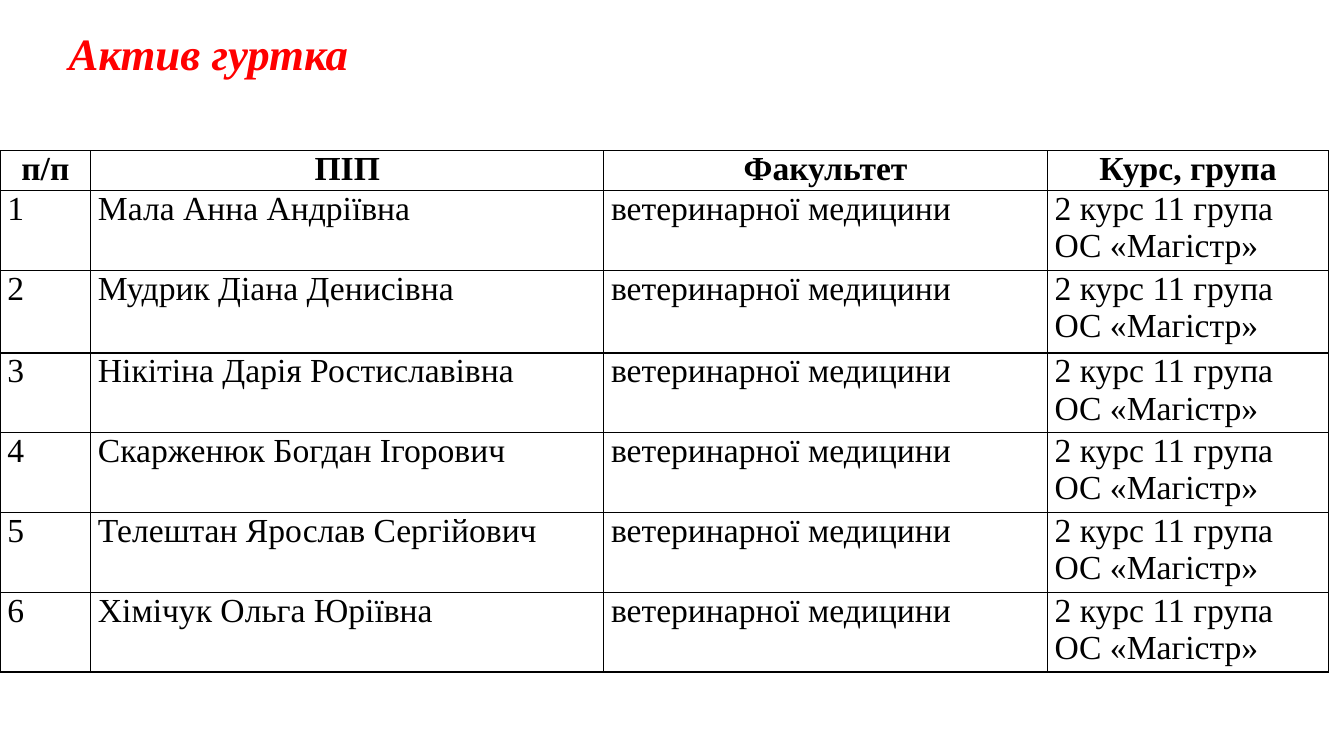
from dataclasses import dataclass

from lxml.etree import SubElement
from pptx import Presentation
from pptx.dml.color import RGBColor
from pptx.enum.text import MSO_ANCHOR, PP_ALIGN
from pptx.oxml import parse_xml
from pptx.oxml.ns import nsdecls
from pptx.util import Pt


@dataclass(frozen=True)
class Theme:
    font: str = "Times New Roman"
    title_size: int = 32
    table_size: int = 24
    border_width: int = 1
    title_color: str = "FF0000"
    text_color: str = "000000"


THEME = Theme()
HEADER = ["п/п", "ПІП", "Факультет", "Курс, група"]
MEMBERS = [
    "Мала Анна Андріївна",
    "Мудрик Діана Денисівна",
    "Нікітіна Дарія Ростиславівна",
    "Скарженюк Богдан Ігорович",
    "Телештан Ярослав Сергійович",
    "Хімічук Ольга Юріївна",
]
FACULTY = "ветеринарної медицини"
GROUP = "2 курс 11 група ОС «Магістр»"
COLUMN_WIDTHS = [64.8, 366.5, 316.8, 201]
ROW_HEIGHTS = [28.6, 57, 59] + [57] * 4


def format_text(p, size, color, bold=False, italic=False):
    for r in p.runs:
        r.font.name = THEME.font
        r.font.size = Pt(size)
        r.font.bold = bold
        r.font.italic = italic
        r.font.color.rgb = RGBColor.from_string(color)


def add_title(s, text):
    title = s.shapes.title
    title.left, title.top, title.width, title.height = Pt(41.8), Pt(14.4), Pt(224), Pt(46)
    tf = title.text_frame
    tf.text = text
    tf.word_wrap = False
    tf.vertical_anchor = MSO_ANCHOR.TOP
    p = tf.paragraphs[0]
    p.alignment = PP_ALIGN.LEFT
    p.line_spacing = 1.0
    format_text(p, THEME.title_size, THEME.title_color, bold=True, italic=True)


def add_borders(cell):
    tcPr = cell._tc.get_or_add_tcPr()
    for i, side in enumerate(("lnL", "lnR", "lnT", "lnB")):
        ln = parse_xml(f'<a:{side} {nsdecls("a")} w="{Pt(THEME.border_width)}"/>')
        namespace = ln.nsmap["a"]
        fill = SubElement(ln, f"{{{namespace}}}solidFill")
        SubElement(fill, f"{{{namespace}}}srgbClr", val=THEME.text_color)
        tcPr.insert(i, ln)


def fill_cell(cell, text, is_header):
    cell.text_frame.text = text
    cell.margin_left = cell.margin_right = Pt(5.2)
    cell.margin_top = cell.margin_bottom = 0
    p = cell.text_frame.paragraphs[0]
    p.alignment = PP_ALIGN.CENTER if is_header else PP_ALIGN.LEFT
    format_text(p, THEME.table_size, THEME.text_color, bold=is_header)
    cell.fill.background()
    add_borders(cell)


def add_member_table(s, rows):
    frame = s.shapes.add_table(len(rows), len(HEADER), 0, Pt(107.6),
                               Pt(sum(COLUMN_WIDTHS)), Pt(sum(ROW_HEIGHTS)))
    table = frame.table
    table.horz_banding = False
    for column, width in zip(table.columns, COLUMN_WIDTHS):
        column.width = Pt(width)
    for row, height, texts in zip(table.rows, ROW_HEIGHTS, rows):
        row.height = Pt(height)
        for cell, text in zip(row.cells, texts):
            fill_cell(cell, text, is_header=texts is HEADER)


def main():
    prs = Presentation()
    prs.slide_width, prs.slide_height = Pt(960), Pt(540)
    s = prs.slides.add_slide(prs.slide_layouts[5])
    add_title(s, "Актив гуртка")
    members = [[str(number), name, FACULTY, GROUP]
               for number, name in enumerate(MEMBERS, start=1)]
    add_member_table(s, [HEADER] + members)
    prs.save("out.pptx")


if __name__ == "__main__":
    main()
